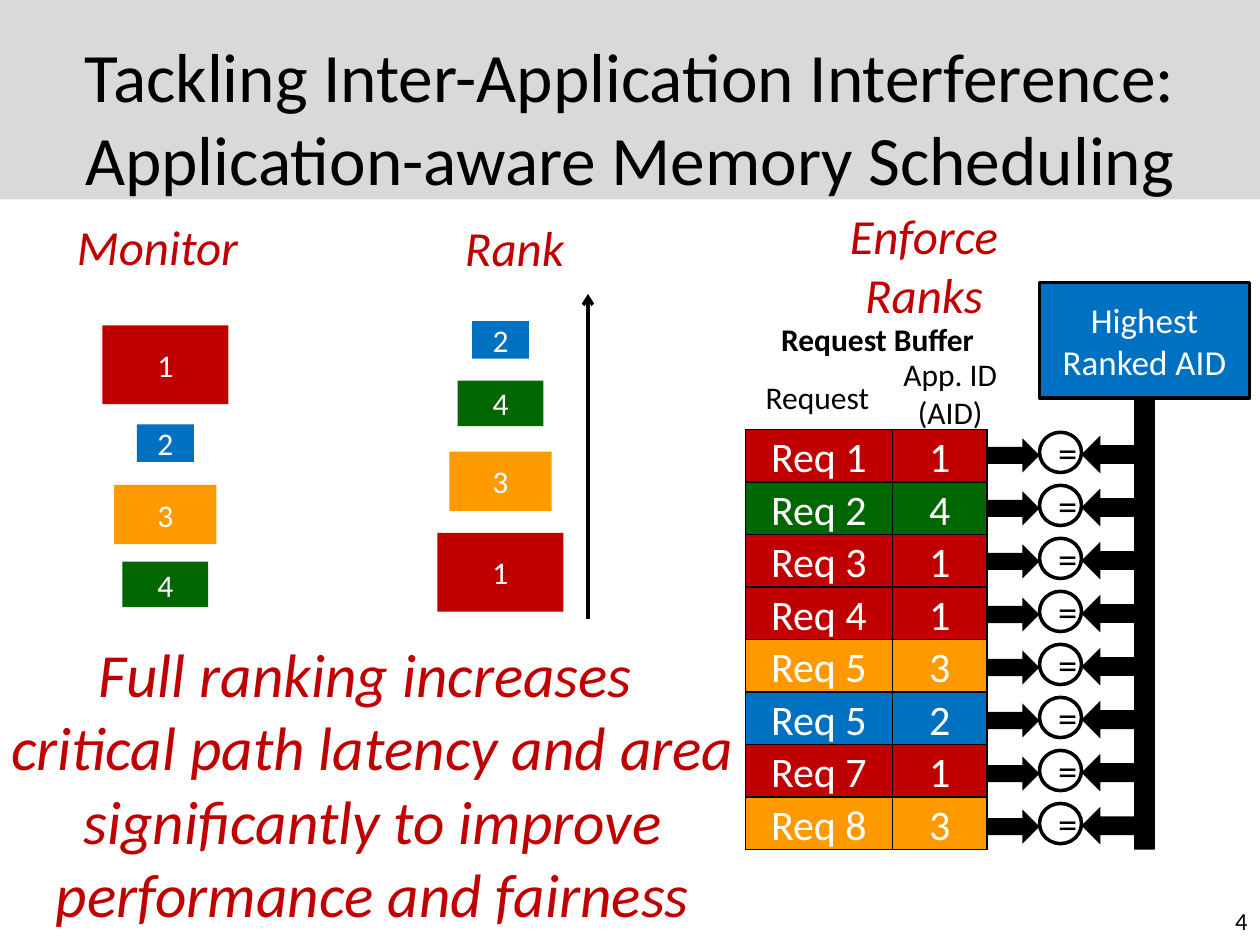
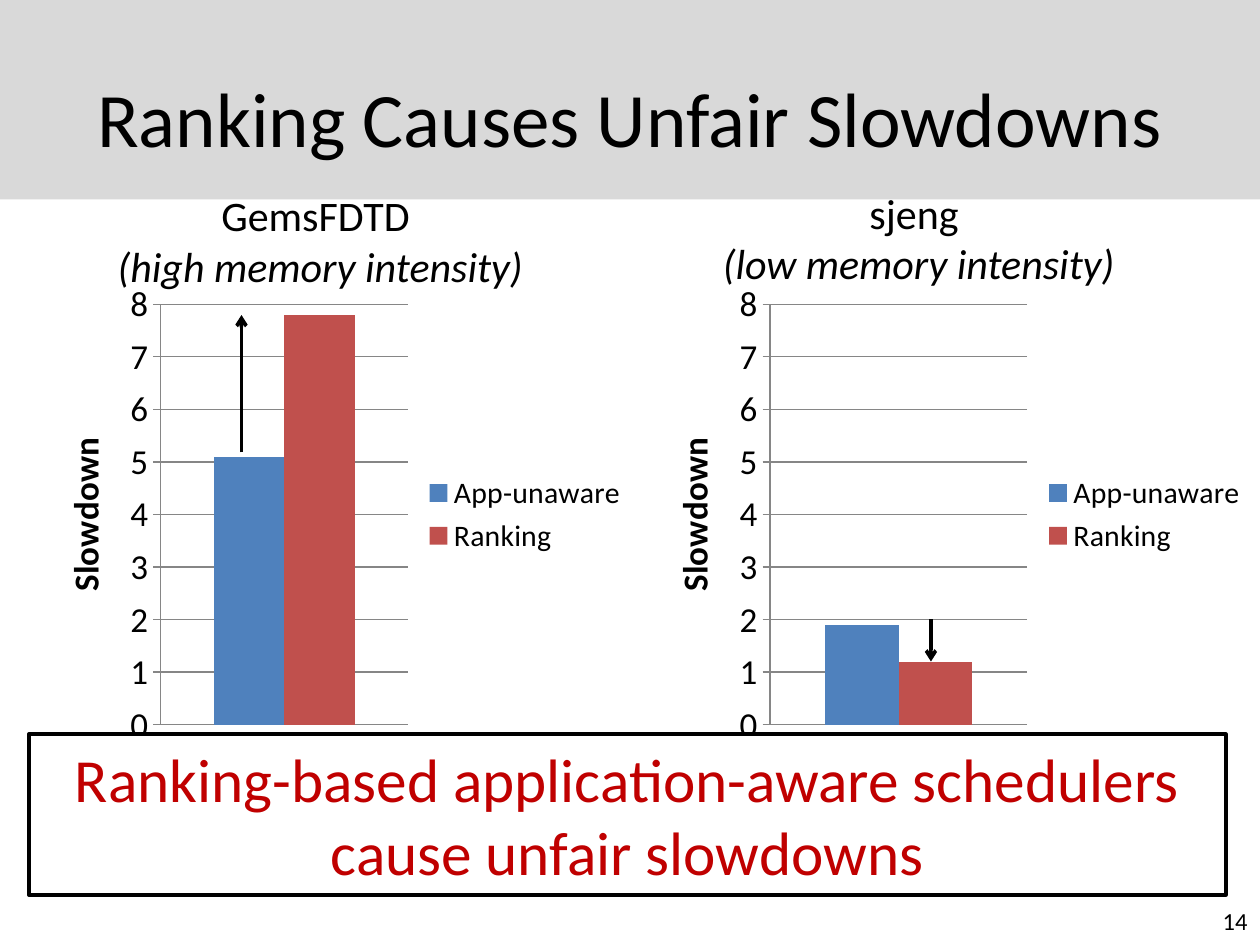
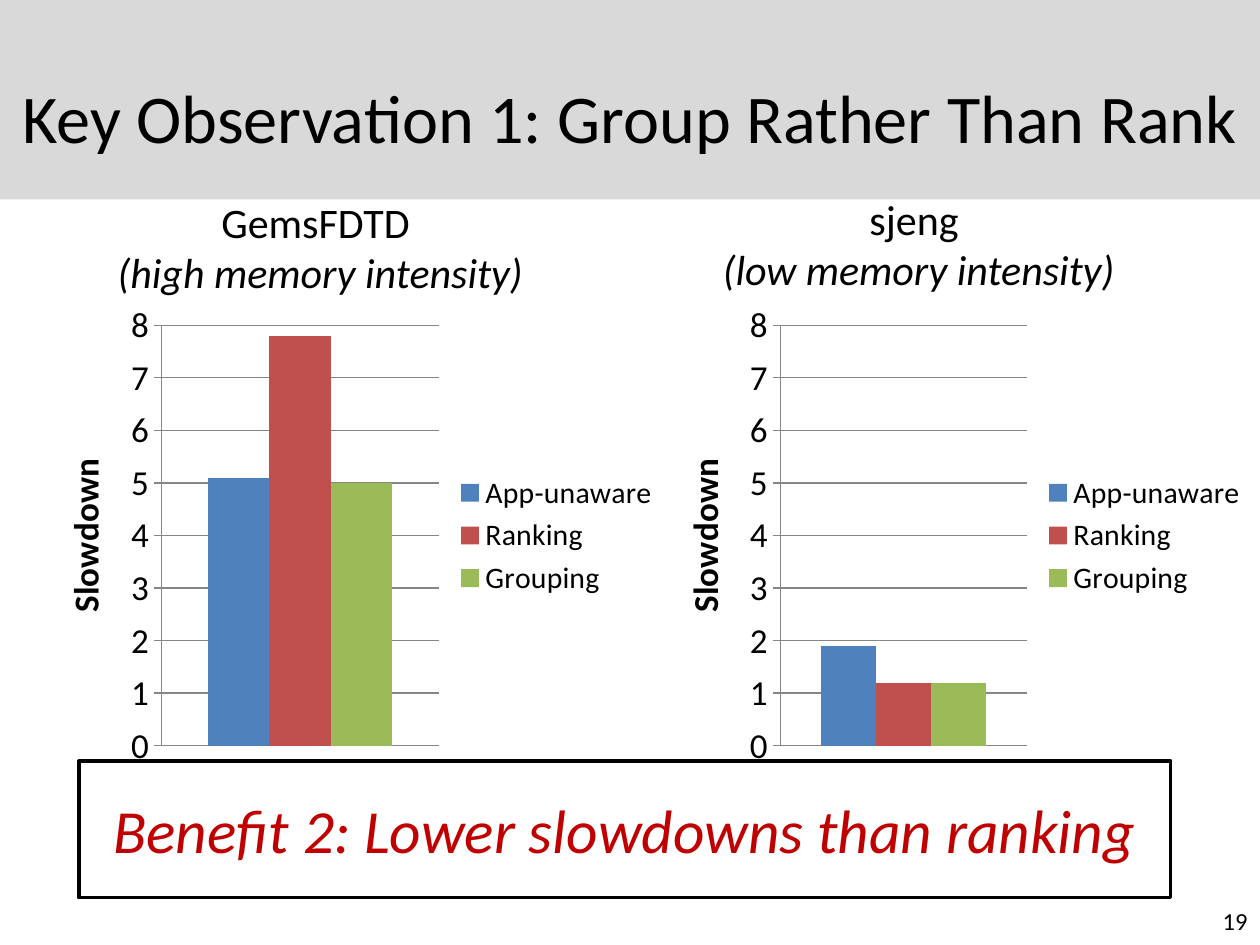
from lxml.etree import SubElement
from pptx import Presentation
from pptx.chart.data import CategoryChartData
from pptx.dml.color import RGBColor
from pptx.enum.chart import XL_CHART_TYPE as ChartType, XL_LEGEND_POSITION as LegendPosition
from pptx.enum.chart import XL_TICK_LABEL_POSITION as LabelPosition, XL_TICK_MARK as TickMark
from pptx.enum.shapes import MSO_CONNECTOR as Connector, MSO_SHAPE as Preset
from pptx.enum.text import MSO_ANCHOR as Anchor, PP_ALIGN as Align
from pptx.oxml.ns import qn
from pptx.util import Pt

FONT = "Calibri"
BLACK, WHITE, BAND, GRID = "000000", "FFFFFF", "D9D9D9", "868686"
RED, BLUE, GREEN, ORANGE = "C00000", "0070C0", "006600", "FF9900"
SERIES_COLORS = {"App-unaware": "4F81BD", "Ranking": "C0504D", "Grouping": "9BBB59"}

APP_COLORS = {"1": RED, "2": BLUE, "3": ORANGE, "4": GREEN}
APP_SIZES = {"1": (72, 45), "2": (32.5, 21.5), "3": (58.5, 34), "4": (49, 26)}
MONITORED = {"center": 94.5, "tops": {"1": 186, "2": 242.5, "3": 277, "4": 321}}
RANKED = {"center": 286, "tops": {"2": 183.5, "4": 217.5, "3": 258, "1": 304.5}}
REQUESTS = [("Req 1", "1"), ("Req 2", "4"), ("Req 3", "1"), ("Req 4", "1"),
            ("Req 5", "3"), ("Req 5", "2"), ("Req 7", "1"), ("Req 8", "3")]
STEP_HEADINGS = [("Monitor", 30, 120, 41), ("Rank", 234, 121, 41), ("Enforce\nRanks", 468, 114, 75)]
CONCLUSION = ("Full ranking increases \ncritical path latency and area "
              "significantly to improve performance and fairness")

BUFFER_LEFT, BUFFER_TOP, ROW_HEIGHT = 426, 245.5, 30
REQUEST_WIDTH, ID_WIDTH = 84, 54
COMPARATOR_LEFT, COMPARATOR_TOP, COMPARATOR_PITCH = 594, 247, 30.3

GEMS, SJENG = "GemsFDTD \n(high memory intensity)", "sjeng \n(low memory intensity)"
CHART_SLIDES = [
    {"title": "Ranking Causes Unfair Slowdowns", "title_size": 44, "title_margin": 36, "number": "14",
     "chart_top": 156, "heading_top": 105,
     "charts": [(18, 348, {"App-unaware": 5.1, "Ranking": 7.8}),
                (366, 354, {"App-unaware": 1.9, "Ranking": 1.2})],
     "arrows": [(138, 258.5, 180), (532, 354, 378)],
     "message": "Ranking-based application-aware schedulers cause unfair slowdowns",
     "message_box": (16.5, 419.5, 684, 92), "italic": False},
    {"title": "Key Observation 1: Group Rather Than Rank", "title_size": 39, "title_margin": 0, "number": "19",
     "chart_top": 168, "heading_top": 108.5,
     "charts": [(18, 366, {"App-unaware": 5.1, "Ranking": 7.8, "Grouping": 5}),
                (372, 348, {"App-unaware": 1.9, "Ranking": 1.2, "Grouping": 1.2})],
     "arrows": [],
     "message": "Benefit 2: Lower slowdowns than ranking",
     "message_box": (45, 435, 624, 78), "italic": True},
]


def color(value):
    """Turn a hex string into a colour."""
    return RGBColor.from_string(value)


def write(shape, text, size=18, ink=BLACK, bold=False, italic=False, align=Align.CENTER, anchor=Anchor.MIDDLE):
    """Fill a shape with one paragraph per line of text."""
    frame = shape.text_frame
    frame.word_wrap = True
    frame.vertical_anchor = anchor
    for index, line in enumerate(text.split("\n")):
        paragraph = frame.add_paragraph() if index else frame.paragraphs[0]
        paragraph.alignment = align
        run = paragraph.add_run()
        run.text = line
        font = run.font
        font.name, font.size, font.bold, font.italic = FONT, Pt(size), bold, italic
        font.color.rgb = color(ink)


def add_text(slide, text, left, top, width, height, anchor=Anchor.TOP, **style):
    """Add a text box and return it."""
    box = slide.shapes.add_textbox(Pt(left), Pt(top), Pt(width), Pt(height))
    write(box, text, anchor=anchor, **style)
    return box


def add_box(slide, left, top, width, height, fill=None, line=0, preset=Preset.RECTANGLE, text="", **style):
    """Add a preset shape with optional fill, black outline and text."""
    shape = slide.shapes.add_shape(preset, Pt(left), Pt(top), Pt(width), Pt(height))
    shape.shadow.inherit = False
    if fill:
        shape.fill.solid()
        shape.fill.fore_color.rgb = color(fill)
    else:
        shape.fill.background()
    if line:
        shape.line.color.rgb = color(BLACK)
        shape.line.width = Pt(line)
    else:
        shape.line.fill.background()
    if text:
        write(shape, text, **style)


def add_arrow(slide, x, start, end):
    """Draw a vertical arrow from start to end."""
    arrow = slide.shapes.add_connector(Connector.STRAIGHT, Pt(x), Pt(start), Pt(x), Pt(end))
    arrow.line.color.rgb = color(BLACK)
    arrow.line.width = Pt(2)
    SubElement(arrow.line._get_or_add_ln(), qn("a:tailEnd"), type="arrow")
    SubElement(arrow._element.spPr, qn("a:effectLst"))


def start_slide(presentation, title, title_size, number, title_margin=36):
    """Add a slide with the grey band, title and page number."""
    slide = presentation.slides.add_slide(presentation.slide_layouts[6])
    add_box(slide, 0, 0, 720, 114, BAND)
    add_text(slide, title, title_margin, 21.5, 720 - 2 * title_margin, 90, size=title_size, anchor=Anchor.MIDDLE)
    add_text(slide, number, 552, 511.5, 168, 29, size=14, align=Align.RIGHT, anchor=Anchor.MIDDLE)
    return slide


def set_font(font, size, bold=False):
    """Format the font of a chart part."""
    font.name, font.size, font.bold = FONT, Pt(size), bold
    font.color.rgb = color(BLACK)


def add_slowdown_chart(slide, left, top, width, values):
    """Add a column chart with one column per scheduler."""
    data = CategoryChartData()
    data.categories = ["1"]
    for name, value in values.items():
        data.add_series(name, [value])
    chart = slide.shapes.add_chart(ChartType.COLUMN_CLUSTERED, Pt(left), Pt(top), Pt(width), Pt(276), data).chart
    set_font(chart.font, 20)
    chart.has_title = False
    chart.has_legend = True
    chart.legend.position = LegendPosition.RIGHT
    chart.legend.include_in_layout = False
    set_font(chart.legend.font, 17)
    plot = chart.plots[0]
    plot.gap_width, plot.overlap, plot.vary_by_categories = 150, 0, False
    for series in plot.series:
        series.format.fill.solid()
        series.format.fill.fore_color.rgb = color(SERIES_COLORS[series.name])
    chart.category_axis.visible = False
    chart.category_axis.tick_label_position = LabelPosition.NONE
    axis = chart.value_axis
    axis.minimum_scale, axis.maximum_scale, axis.major_unit = 0, 8, 1
    axis.major_tick_mark = TickMark.OUTSIDE
    axis.has_major_gridlines = True
    for part in (axis, axis.major_gridlines):
        part.format.line.color.rgb = color(GRID)
        part.format.line.width = Pt(0.75)
    set_font(axis.tick_labels.font, 20)
    title_frame = axis.axis_title.text_frame
    title_frame.text = "Slowdown"
    set_font(title_frame.paragraphs[0].runs[0].font, 20, bold=True)


def add_applications(slide, center, tops):
    """Stack the application blocks around a centre line."""
    for app, top in tops.items():
        width, height = APP_SIZES[app]
        add_box(slide, center - width / 2, top, width, height, APP_COLORS[app], text=app, ink=WHITE)


def add_request_buffer(slide):
    """Draw the request buffer with its headings."""
    id_left = BUFFER_LEFT + REQUEST_WIDTH
    add_box(slide, BUFFER_LEFT, BUFFER_TOP, REQUEST_WIDTH + ID_WIDTH, ROW_HEIGHT * len(REQUESTS), line=1)
    for row, (request, app) in enumerate(REQUESTS):
        top = BUFFER_TOP + row * ROW_HEIGHT
        for left, width, text in ((BUFFER_LEFT, REQUEST_WIDTH, request), (id_left, ID_WIDTH, app)):
            add_box(slide, left, top, width, ROW_HEIGHT, APP_COLORS[app], 1, text=text, size=24, ink=WHITE)
    add_text(slide, "Request Buffer", 417.5, 179.5, 168, 29, bold=True)
    add_text(slide, "Request", 430.5, 212.5, 78, 29, align=Align.LEFT)
    add_text(slide, "App. ID (AID)", 492, 199.5, 102, 51)


def add_comparators(slide):
    """Draw the comparators and the bus that feeds them."""
    add_box(slide, 648, 227.5, 12, 258, BLACK)
    for row in range(len(REQUESTS)):
        top = COMPARATOR_TOP + row * COMPARATOR_PITCH
        add_box(slide, COMPARATOR_LEFT + 24, top + 2, 30, 21.5, BLACK, preset=Preset.LEFT_ARROW)
        add_box(slide, COMPARATOR_LEFT - 30, top + 3.5, 30, 19.5, BLACK, preset=Preset.RIGHT_ARROW)
        add_box(slide, COMPARATOR_LEFT, top, 24, 23, line=2, preset=Preset.OVAL, text="=", size=22)


def build_scheduling_slide(presentation):
    """Build the slide on application-aware scheduling."""
    title = "Tackling Inter-Application Interference:\nApplication-aware Memory Scheduling"
    slide = start_slide(presentation, title, 39.6, "4")
    for text, left, top, height in STEP_HEADINGS:
        add_text(slide, text, left, top, 120, height, size=28, ink=RED, italic=True)
    add_box(slide, 594, 161.5, 120, 66, BLUE, 2, text="Highest Ranked AID", size=20, ink=WHITE)
    add_text(slide, CONCLUSION, -6, 360, 438, 177, size=35, ink=RED, italic=True)
    add_applications(slide, **MONITORED)
    add_applications(slide, **RANKED)
    add_arrow(slide, 336, 354, 168)
    add_request_buffer(slide)
    add_comparators(slide)


def build_chart_slide(presentation, content):
    """Build a slide that compares slowdowns in two charts."""
    slide = start_slide(presentation, content["title"], content["title_size"],
                        content["number"], content["title_margin"])
    for left, width, values in content["charts"]:
        add_slowdown_chart(slide, left, content["chart_top"], width, values)
    for arrow in content["arrows"]:
        add_arrow(slide, *arrow)
    add_box(slide, *content["message_box"], WHITE, 2, text=content["message"],
            size=35, ink=RED, italic=content["italic"])
    top = content["heading_top"]
    for text, left, heading_top, width in ((GEMS, -12, top, 390), (SJENG, 354, top - 1.5, 342)):
        heading = add_text(slide, text, left, heading_top, width, 65.5, size=24)
        heading.text_frame.paragraphs[1].runs[0].font.italic = True


def main():
    """Build the presentation."""
    presentation = Presentation()
    presentation.slide_width, presentation.slide_height = Pt(720), Pt(540)
    build_scheduling_slide(presentation)
    for content in CHART_SLIDES:
        build_chart_slide(presentation, content)
    presentation.save("out.pptx")


if __name__ == "__main__":
    main()
